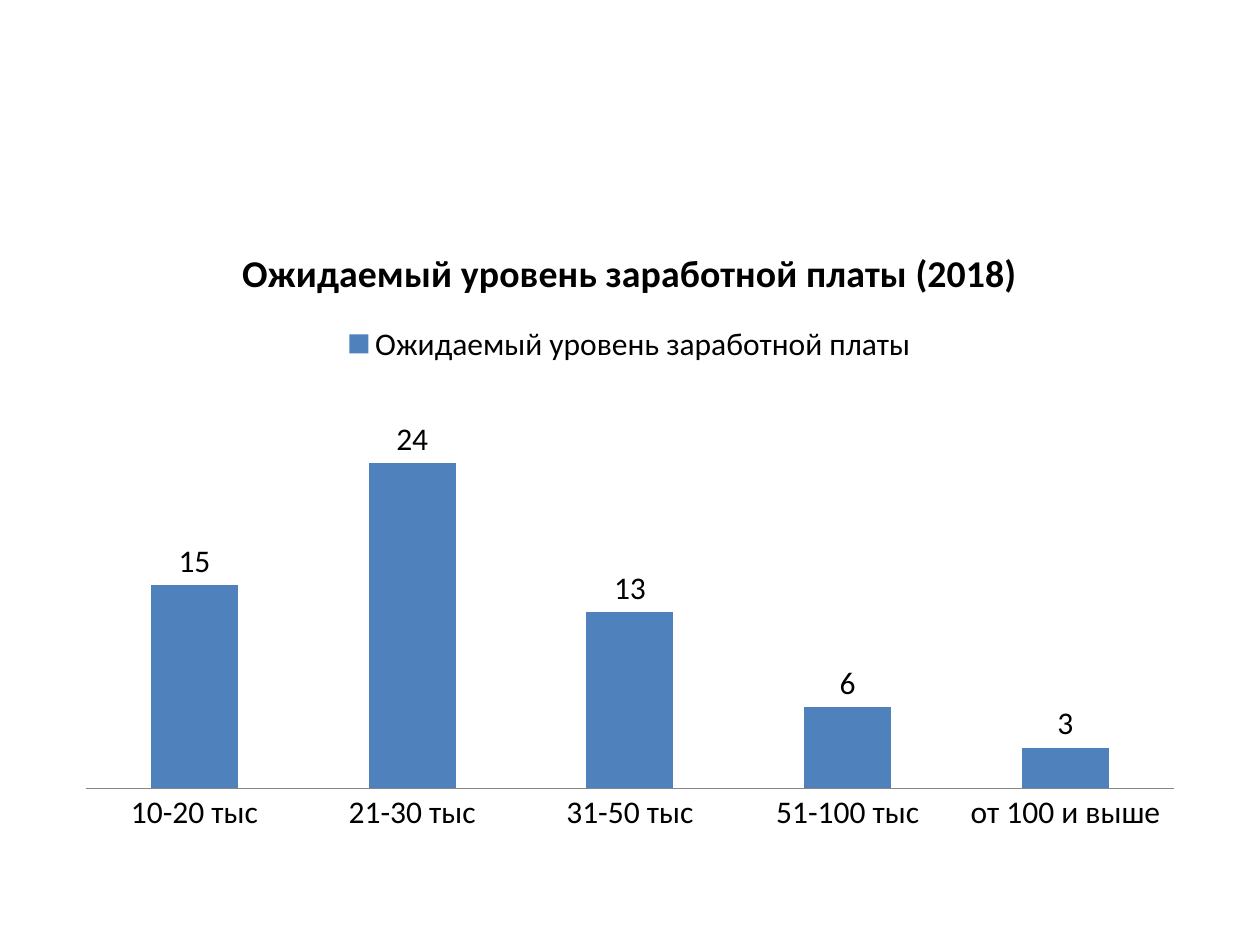
"""Build a slide with a column chart of expected salary levels."""
from dataclasses import dataclass

from pptx import Presentation
from pptx.chart.data import CategoryChartData
from pptx.dml.color import RGBColor
from pptx.enum.chart import XL_CHART_TYPE, XL_LABEL_POSITION, XL_LEGEND_POSITION, XL_TICK_MARK
from pptx.util import Inches, Pt

COLUMNS = XL_CHART_TYPE.COLUMN_CLUSTERED
OUTSIDE_END = XL_LABEL_POSITION.OUTSIDE_END
LEGEND_TOP = XL_LEGEND_POSITION.TOP
NO_TICK = XL_TICK_MARK.NONE

TITLE = "Ожидаемый уровень заработной платы (2018)"
SERIES_NAME = "Ожидаемый уровень заработной платы"
ANSWERS = {
    "10-20 тыс": 15,
    "21-30 тыс": 24,
    "31-50 тыс": 13,
    "51-100 тыс": 6,
    "от 100 и выше": 3,
}
CHART_SHARES = (0.05, 0.233, 0.9, 0.66)


@dataclass(frozen=True)
class Theme:
    font: str = "Calibri"
    text: str = "000000"
    bar: str = "4F81BD"
    axis: str = "868686"
    body_size: float = 18
    title_size: float = 21.6


THEME = Theme()


def format_font(font, size=THEME.body_size, bold=False):
    font.name = THEME.font
    font.size = Pt(size)
    font.bold = bold
    font.color.rgb = RGBColor.from_string(THEME.text)


def write_text(text_frame, text, **font_format):
    text_frame.text = text
    format_font(text_frame.paragraphs[0].runs[0].font, **font_format)


def format_axes(chart):
    category_axis = chart.category_axis
    category_axis.major_tick_mark = NO_TICK
    category_axis.minor_tick_mark = NO_TICK
    category_axis.format.line.color.rgb = RGBColor.from_string(THEME.axis)
    category_axis.format.line.width = Pt(0.75)
    value_axis = chart.value_axis
    value_axis.minimum_scale = 0
    value_axis.maximum_scale = 30
    value_axis.has_major_gridlines = False
    value_axis.visible = False


def format_columns(plot):
    plot.gap_width = 150
    plot.vary_by_categories = False
    series = plot.series[0]
    series.format.fill.solid()
    series.format.fill.fore_color.rgb = RGBColor.from_string(THEME.bar)
    labels = series.data_labels
    labels.show_value = True
    labels.position = OUTSIDE_END
    format_font(labels.font)


def add_salary_chart(slide, slide_size):
    data = CategoryChartData()
    data.categories = list(ANSWERS)
    data.add_series(SERIES_NAME, list(ANSWERS.values()))
    bounds = [int(share * side) for share, side in zip(CHART_SHARES, slide_size * 2)]
    chart = slide.shapes.add_chart(COLUMNS, *bounds, data).chart
    format_font(chart.font)
    write_text(chart.chart_title.text_frame, TITLE, size=THEME.title_size, bold=True)
    chart.chart_title.include_in_layout = False
    chart.has_legend = True
    chart.legend.position = LEGEND_TOP
    chart.legend.include_in_layout = False
    format_font(chart.legend.font)
    format_axes(chart)
    format_columns(chart.plots[0])


def main():
    presentation = Presentation()
    slide_size = (Inches(10), Inches(7.5))
    presentation.slide_width, presentation.slide_height = slide_size
    slide = presentation.slides.add_slide(presentation.slide_layouts[6])
    add_salary_chart(slide, slide_size)
    presentation.save("out.pptx")


if __name__ == "__main__":
    main()
